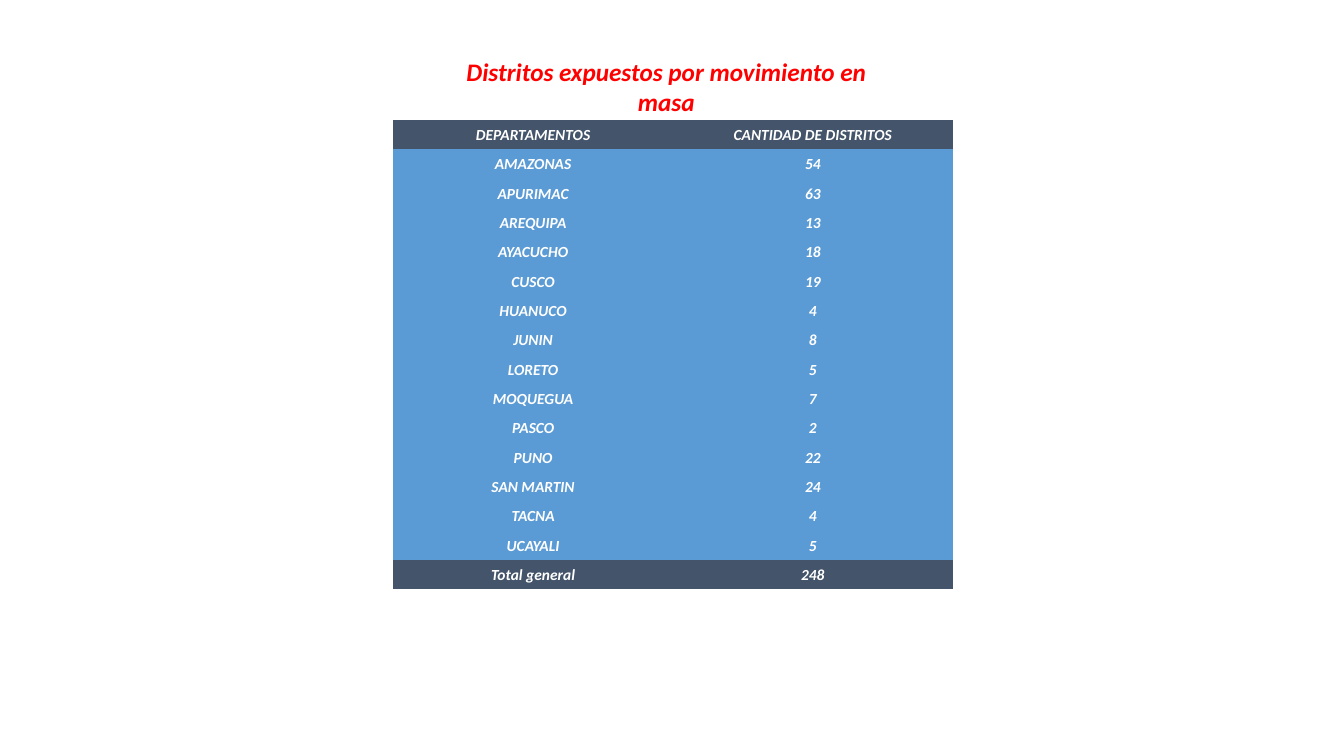
from pptx import Presentation
from pptx.dml.color import RGBColor
from pptx.enum.text import MSO_ANCHOR as Anchor, PP_ALIGN as Align
from pptx.util import Inches, Pt

TITLE = "Distritos expuestos por movimiento en masa"
HEADER = ("DEPARTAMENTOS", "CANTIDAD DE DISTRITOS")
DISTRICTS = [
    ("AMAZONAS", 54), ("APURIMAC", 63), ("AREQUIPA", 13), ("AYACUCHO", 18),
    ("CUSCO", 19), ("HUANUCO", 4), ("JUNIN", 8), ("LORETO", 5),
    ("MOQUEGUA", 7), ("PASCO", 2), ("PUNO", 22), ("SAN MARTIN", 24),
    ("TACNA", 4), ("UCAYALI", 5),
]
TOTAL = ("Total general", sum(count for _, count in DISTRICTS))
ROWS = [HEADER, *DISTRICTS, TOTAL]

RED, WHITE, DARK, BLUE = "FF0000", "FFFFFF", "44546A", "5B9BD5"
TITLE_BOX = (4.22, 0.51, 4.9, 0.4)
TABLE_BOX = (3.9, 1.19, 5.55, 4.66)
PLAIN_STYLE = "{2D5ABB26-0587-4C30-8999-92F81FD0307C}"


def color(value):
    """Turn a hex string into a colour."""
    return RGBColor.from_string(value)


def write(frame, text, size, ink):
    """Put one centred, bold italic line into a text frame."""
    frame.text = text
    para = frame.paragraphs[0]
    para.alignment = Align.CENTER
    font = para.runs[0].font
    font.name, font.size = "Calibri", Pt(size)
    font.bold = font.italic = True
    font.color.rgb = color(ink)


def add_title(page):
    """Add the red heading."""
    frame = page.shapes.add_textbox(*map(Inches, TITLE_BOX)).text_frame
    frame.word_wrap = False
    frame.margin_right = Inches(0.22)
    write(frame, TITLE, 18, RED)


def add_district_table(page):
    """Add the table of districts with dark first and last rows."""
    holder = page.shapes.add_table(len(ROWS), len(HEADER), *map(Inches, TABLE_BOX))
    table = holder.table
    table.horz_banding = False
    for style in holder.element.xpath(".//a:tableStyleId"):
        style.text = PLAIN_STYLE
    for row, values in enumerate(ROWS):
        table.rows[row].height = Inches(TABLE_BOX[3] / len(ROWS))
        for column, value in enumerate(values):
            cell = table.cell(row, column)
            cell.fill.solid()
            cell.fill.fore_color.rgb = color(DARK if values in (HEADER, TOTAL) else BLUE)
            cell.vertical_anchor = Anchor.MIDDLE
            cell.margin_left = cell.margin_top = cell.margin_right = Inches(0.01)
            cell.margin_bottom = 0
            write(cell.text_frame, str(value), 11, WHITE)


def main():
    """Build the slide and save it."""
    deck = Presentation()
    deck.slide_width, deck.slide_height = Inches(13.33), Inches(7.5)
    page = deck.slides.add_slide(deck.slide_layouts[6])
    add_title(page)
    add_district_table(page)
    deck.save("out.pptx")


if __name__ == "__main__":
    main()
